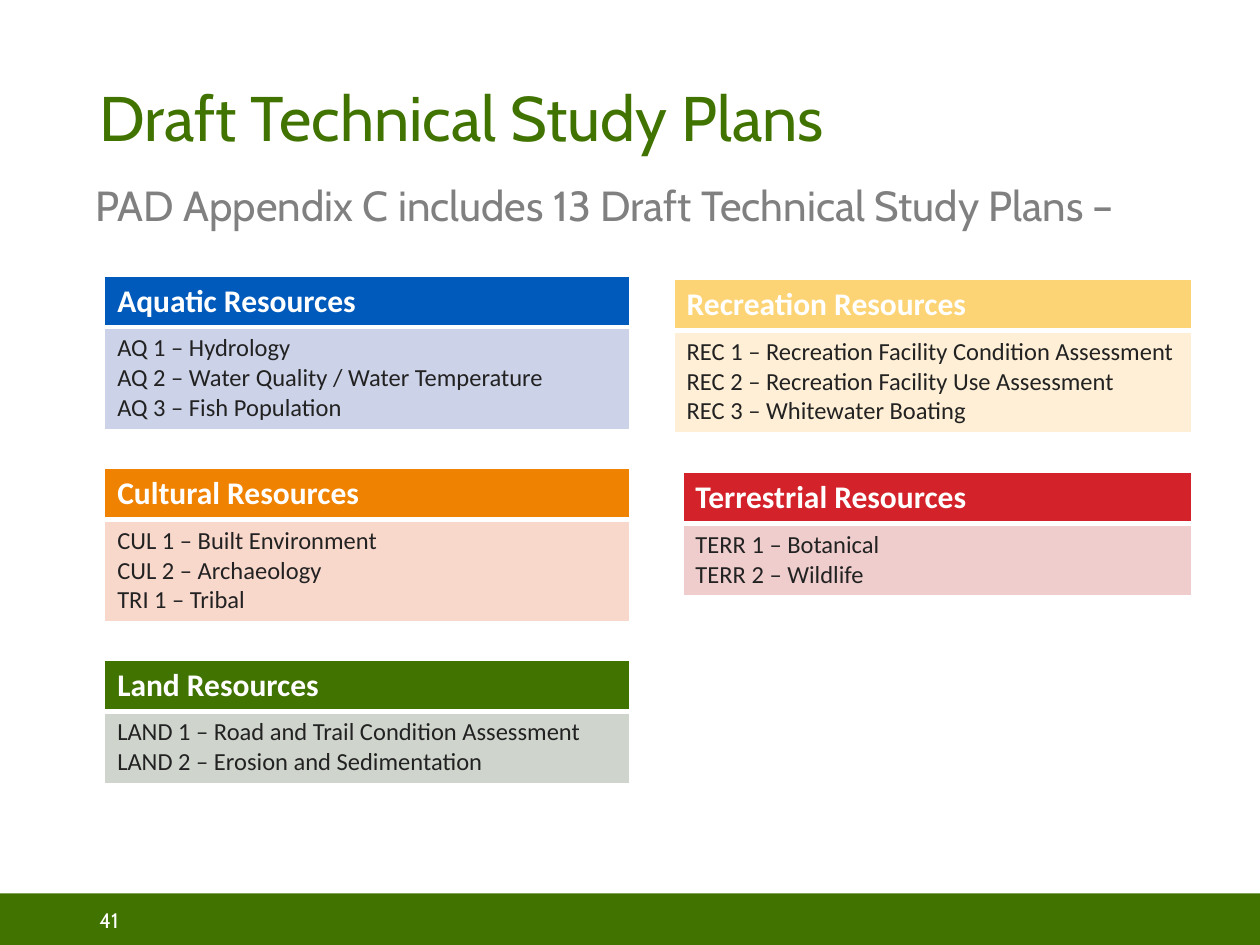
import pptx
import pptx.util
import pptx.dml.color
import pptx.enum.shapes
import pptx.enum.text
import pptx.oxml
import pptx.oxml.ns

Pt = pptx.util.Pt
RGBColor = pptx.dml.color.RGBColor
ANCHOR = pptx.enum.text.MSO_ANCHOR

WHITE = RGBColor(0xFF, 0xFF, 0xFF)
GREEN = RGBColor(0x41, 0x73, 0x00)
GRAY = RGBColor(0x80, 0x80, 0x80)
INK = RGBColor(0x22, 0x22, 0x22)
BLUE = RGBColor(0x00, 0x5A, 0xBB)
PALE_BLUE = RGBColor(0xCC, 0xD2, 0xE7)
ORANGE = RGBColor(0xEF, 0x82, 0x00)
PALE_ORANGE = RGBColor(0xF9, 0xD8, 0xCC)
PALE_GREEN = RGBColor(0xCF, 0xD5, 0xCC)
YELLOW = RGBColor(0xFD, 0xD4, 0x75)
PALE_YELLOW = RGBColor(0xFE, 0xEF, 0xD6)
RED = RGBColor(0xD3, 0x22, 0x2A)
PALE_RED = RGBColor(0xEF, 0xCD, 0xCD)

HEADER_HEIGHT = 29.2
LINE_HEIGHT = 17.1
CELL_PADDING = 7.2
HEADING = {"name": "Calibri", "size": Pt(18), "bold": True}
ENTRY = {"name": "Calibri", "size": Pt(14), "bold": False}

STUDY_GROUPS = [
    ((59.8, 157.7, 300.2), BLUE, PALE_BLUE, "Aquatic Resources",
     ["AQ 1 – Hydrology",
      "AQ 2 – Water Quality / Water Temperature",
      "AQ 3 – Fish Population"]),
    ((59.8, 267.8, 300.2), ORANGE, PALE_ORANGE, "Cultural Resources",
     ["CUL 1 – Built Environment",
      "CUL 2 – Archaeology",
      "TRI 1 – Tribal"]),
    ((59.8, 377.3, 300.2), GREEN, PALE_GREEN, "Land Resources",
     ["LAND 1 – Road and Trail Condition Assessment",
      "LAND 2 – Erosion and Sedimentation"]),
    ((385.2, 159.8, 295.9), YELLOW, PALE_YELLOW, "Recreation Resources",
     ["REC 1 – Recreation Facility Condition Assessment",
      "REC 2 – Recreation Facility Use Assessment",
      "REC 3 – Whitewater Boating"]),
    ((390.2, 270, 290.9), RED, PALE_RED, "Terrestrial Resources",
     ["TERR 1 – Botanical",
      "TERR 2 – Wildlife"]),
]


def set_font(p, color, values):
    for name, value in values.items():
        setattr(p.font, name, value)
    p.font.color.rgb = color


def add_text(s, box, text, size, color, anchor=ANCHOR.MIDDLE, spacing=0.9):
    tf = s.shapes.add_textbox(*map(Pt, box)).text_frame
    tf.word_wrap = True
    tf.vertical_anchor = anchor
    p = tf.paragraphs[0]
    p.line_spacing = spacing
    p.add_run().text = text
    set_font(p, color, {"name": "Cabin", "size": Pt(size)})


def add_borders(cell, widths):
    tc_pr = cell._tc.get_or_add_tcPr()
    for side, width in widths.items():
        tc_pr.append(pptx.oxml.parse_xml(
            f'<a:ln{side} {pptx.oxml.ns.nsdecls("a")} w="{Pt(width)}">'
            f'<a:solidFill><a:srgbClr val="{WHITE}"/></a:solidFill>'
            f'</a:ln{side}>'))


def fill_cell(cell, lines, fill, color, font, borders):
    add_borders(cell, borders)
    cell.fill.solid()
    cell.fill.fore_color.rgb = fill
    tf = cell.text_frame
    tf.text = "\n".join(lines)
    for p in tf.paragraphs:
        set_font(p, color, font)


def add_study_group(s, box, dark, pale, heading, entries):
    left, top, width = box
    heights = [HEADER_HEIGHT, len(entries) * LINE_HEIGHT + CELL_PADDING]
    table = s.shapes.add_table(
        2, 1, Pt(left), Pt(top), Pt(width), Pt(sum(heights))).table
    for row, height in zip(table.rows, heights):
        row.height = Pt(height)
    fill_cell(table.cell(0, 0), [heading], dark, WHITE, HEADING,
              {"L": 1, "R": 1, "T": 1, "B": 3})
    fill_cell(table.cell(1, 0), entries, pale, INK, ENTRY,
              {"L": 1, "R": 1, "T": 3, "B": 1})


def add_footer(s, box, number):
    left, top, width, height = box
    bar = s.shapes.add_shape(
        pptx.enum.shapes.MSO_SHAPE.RECTANGLE, *map(Pt, box))
    bar.shadow.inherit = False
    bar.fill.solid()
    bar.fill.fore_color.rgb = GREEN
    bar.line.fill.background()
    add_text(s, (left + 49.7, top + 0.7, 162, 28.8), number, 12, WHITE,
             spacing=1.0)


def add_headings(s, box):
    left, top, width, height = box
    add_text(s, (left, top, width, height),
             "Draft Technical Study Plans", 36, GREEN)
    add_text(s, (left - 2.2, top + height, width, 384.5),
             "PAD Appendix C includes 13 Draft Technical Study Plans –",
             24, GRAY, ANCHOR.TOP)


def main():
    prs = pptx.Presentation()
    prs.slide_width, prs.slide_height = Pt(720), Pt(540)
    s = prs.slides.add_slide(prs.slide_layouts[6])
    add_footer(s, (0, 510.5, 720, 29.5), "41")
    add_headings(s, (49.7, 36, 620.6, 66.2))
    for group in STUDY_GROUPS:
        add_study_group(s, *group)
    prs.save("out.pptx")


if __name__ == "__main__":
    main()
